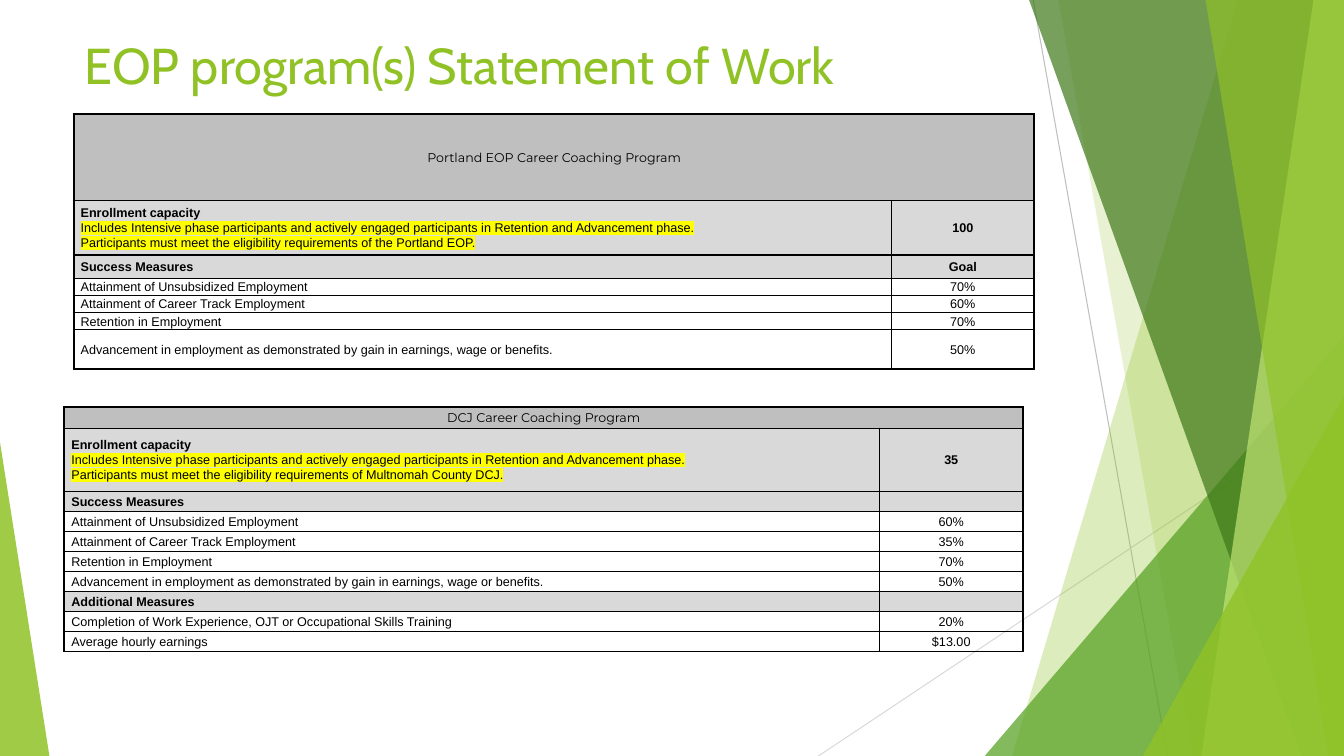
from dataclasses import dataclass

from lxml import etree
from pptx import Presentation
from pptx import util as u
from pptx.dml import color
from pptx.enum import shapes, text
from pptx.oxml import ns

Pt = u.Pt


@dataclass(frozen=True)
class Theme:
    green: str = "90C226"
    mid_green: str = "54A021"
    dark_green: str = "3F7819"
    pale_green: str = "C0E474"
    line: str = "BFBFBF"
    pale_line: str = "D9D9D9"
    header: str = "BFBFBF"
    band: str = "D9D9D9"
    ink: str = "000000"
    highlight: str = "FFFF00"
    title_font: str = "Cabin"
    header_font: str = "Montserrat"
    body_font: str = "Arial"
    title_size: float = 36
    body_size: float = 9
    outer_border: float = 1.5
    inner_border: float = 1


T = Theme()
W, H = 960, 540


def rgb(value):
    return color.RGBColor.from_string(value)


def sub(parent, tag, **attrs):
    return etree.SubElement(parent, ns.qn(tag), attrs)


def apply(obj, values):
    for name, value in values.items():
        setattr(obj, name, value)


# Background facets
def paint(sp, fill, alpha):
    sp.shadow.inherit = False
    sp.fill.solid()
    sp.fill.fore_color.rgb = rgb(fill)
    sp.line.fill.background()
    clr = sp.fill._xPr.find(ns.qn("a:solidFill"))[0]
    sub(clr, "a:alpha", val=str(alpha * 1000))


def add_line(s, x1, y1, x2, y2, line):
    c = s.shapes.add_connector(shapes.MSO_CONNECTOR.STRAIGHT, Pt(x1), Pt(y1), Pt(x2), Pt(y2))
    c.line.color.rgb = rgb(line)
    c.line.width = Pt(0.75)
    sub(c._element.spPr, "a:effectLst")


def add_facet(s, top_x, bottom_x, fill, alpha):
    """Slanted left edge; the other sides follow the slide's edge."""
    fb = s.shapes.build_freeform(Pt(top_x), 0)
    fb.add_line_segments([(Pt(W), 0), (Pt(W), Pt(H)), (Pt(bottom_x), Pt(H))])
    paint(fb.convert_to_shape(), fill, alpha)


def add_triangle(s, x, width, height, apex, fill, alpha):
    """Triangle standing on the bottom edge of the slide."""
    sp = s.shapes.add_shape(shapes.MSO_SHAPE.ISOSCELES_TRIANGLE,
                            Pt(x), Pt(H - height), Pt(width), Pt(height))
    sp.adjustments[0] = apex
    paint(sp, fill, alpha)


def add_backdrop(s):
    add_line(s, 738, 0, 834, H, T.line)
    add_line(s, W, 290, 584.6, H, T.pale_line)
    add_facet(s, 884.2, 722.9, T.green, 30)
    add_facet(s, 756, 851.8, T.green, 20)
    add_triangle(s, 703.4, 256.6, 300, 1, T.mid_green, 72)
    add_facet(s, 735.1, 929.5, T.dark_green, 70)
    add_facet(s, 938.2, 858.2, T.pale_green, 70)
    add_facet(s, 861.1, 949, T.green, 65)
    add_triangle(s, 816.5, 143.5, 257, 1, T.green, 80)
    add_triangle(s, 0, 35.3, 224, 0, T.green, 85)


# Title
def add_title(s, x, y, w, h, words):
    sp = s.shapes.title
    apply(sp, dict(left=Pt(x), top=Pt(y), width=Pt(w), height=Pt(h)))
    tf = sp.text_frame
    apply(tf, dict(word_wrap=True, auto_size=text.MSO_AUTO_SIZE.NONE,
                   vertical_anchor=text.MSO_ANCHOR.TOP))
    p = tf.paragraphs[0]
    p.alignment = text.PP_ALIGN.LEFT
    r = p.add_run()
    r.text = words
    apply(r.font, dict(name=T.title_font, size=Pt(T.title_size)))
    r.font.color.rgb = rgb(T.green)


# Measure tables
def set_borders(cell, widths):
    tcPr = cell._tc.get_or_add_tcPr()
    for i, (side, width) in enumerate(zip("LRTB", widths)):
        ln = etree.Element(ns.qn(f"a:ln{side}"), w=str(Pt(width)))
        sub(sub(ln, "a:solidFill"), "a:srgbClr", val=T.ink)
        tcPr.insert(i, ln)


def write_line(p, words, font, bold, marked, centred):
    p.line_spacing = 1.07
    p.alignment = text.PP_ALIGN.CENTER if centred else text.PP_ALIGN.LEFT
    if not words:
        sub(p._p, "a:endParaRPr", sz=str(int(T.body_size * 100)))
        return
    r = p.add_run()
    r.text = words
    apply(r.font, dict(name=font, size=Pt(T.body_size), bold=bold))
    r.font.color.rgb = rgb(T.ink)
    if marked:
        mark = etree.Element(ns.qn("a:highlight"))
        sub(mark, "a:srgbClr", val=T.highlight)
        r._r.rPr.find(ns.qn("a:solidFill")).addnext(mark)


def add_measures(s, x, y, cols, heights, rows):
    """Each row is (kind, label, value); the kind is title, band or plain."""
    table = s.shapes.add_table(len(rows), 2, Pt(x), Pt(y), Pt(sum(cols)), Pt(sum(heights))).table
    apply(table, dict(first_row=False, horz_banding=False))
    for column, width in zip(table.columns, cols):
        column.width = Pt(width)
    last = len(rows) - 1
    fills = dict(title=T.header, band=T.band)
    for i, (kind, *contents) in enumerate(rows):
        table.rows[i].height = Pt(heights[i])
        if kind == "title":
            table.cell(i, 0).merge(table.cell(i, 1))
        for j, words in enumerate(contents):
            cell = table.cell(i, j)
            apply(cell, dict(margin_left=Pt(5), margin_right=Pt(5), margin_top=0,
                             margin_bottom=0, vertical_anchor=text.MSO_ANCHOR.MIDDLE))
            if kind in fills:
                cell.fill.solid()
                cell.fill.fore_color.rgb = rgb(fills[kind])
            else:
                cell.fill.background()
            outer = (j == 0, j == 1 or kind == "title", i == 0, i == last)
            set_borders(cell, [T.outer_border if o else T.inner_border for o in outer])
            tf = cell.text_frame
            for k, line in enumerate(words.split("\n")):
                p = tf.add_paragraph() if k else tf.paragraphs[0]
                write_line(p, line, T.header_font if kind == "title" else T.body_font,
                           kind == "band" and k == 0, k > 0, j == 1 or kind == "title")


def enrollment(program, capacity):
    return ("band", "Enrollment capacity\nIncludes Intensive phase participants and actively "
            "engaged participants in Retention and Advancement phase.\n"
            f"Participants must meet the eligibility requirements of {program}.", capacity)


def success(goal_heading, *goals):
    measures = ("Attainment of Unsubsidized Employment", "Attainment of Career Track Employment",
                "Retention in Employment",
                "Advancement in employment as demonstrated by gain in earnings, wage or benefits.")
    return [("band", "Success Measures", goal_heading),
            *(("plain", m, g) for m, g in zip(measures, goals))]


def main():
    prs = Presentation()
    apply(prs, dict(slide_width=Pt(W), slide_height=Pt(H)))
    s = prs.slides.add_slide(prs.slide_layouts[5])
    add_backdrop(s)
    add_title(s, 53.3, 20.9, 686, 131, "EOP program(s) Statement of Work")
    add_measures(s, 52.6, 81.4, (584, 102.2), (61.9, 38.9, 16.6, 12.3, 12.3, 12.3, 28.1), [
        ("title", "Portland EOP Career Coaching Program", ""),
        enrollment("the Portland EOP", "100"),
        *success("Goal", "70%", "60%", "70%", "50%")])
    add_measures(s, 46, 290.9, (582.4, 102.2), (15, 45.2, *[14.3] * 8), [
        ("title", "DCJ Career Coaching Program", ""),
        enrollment("Multnomah County DCJ", "35"),
        *success("", "60%", "35%", "70%", "50%"),
        ("band", "Additional Measures", ""),
        ("plain", "Completion of Work Experience, OJT or Occupational Skills Training", "20%"),
        ("plain", "Average hourly earnings", "$13.00")])
    prs.save("out.pptx")


if __name__ == "__main__":
    main()
